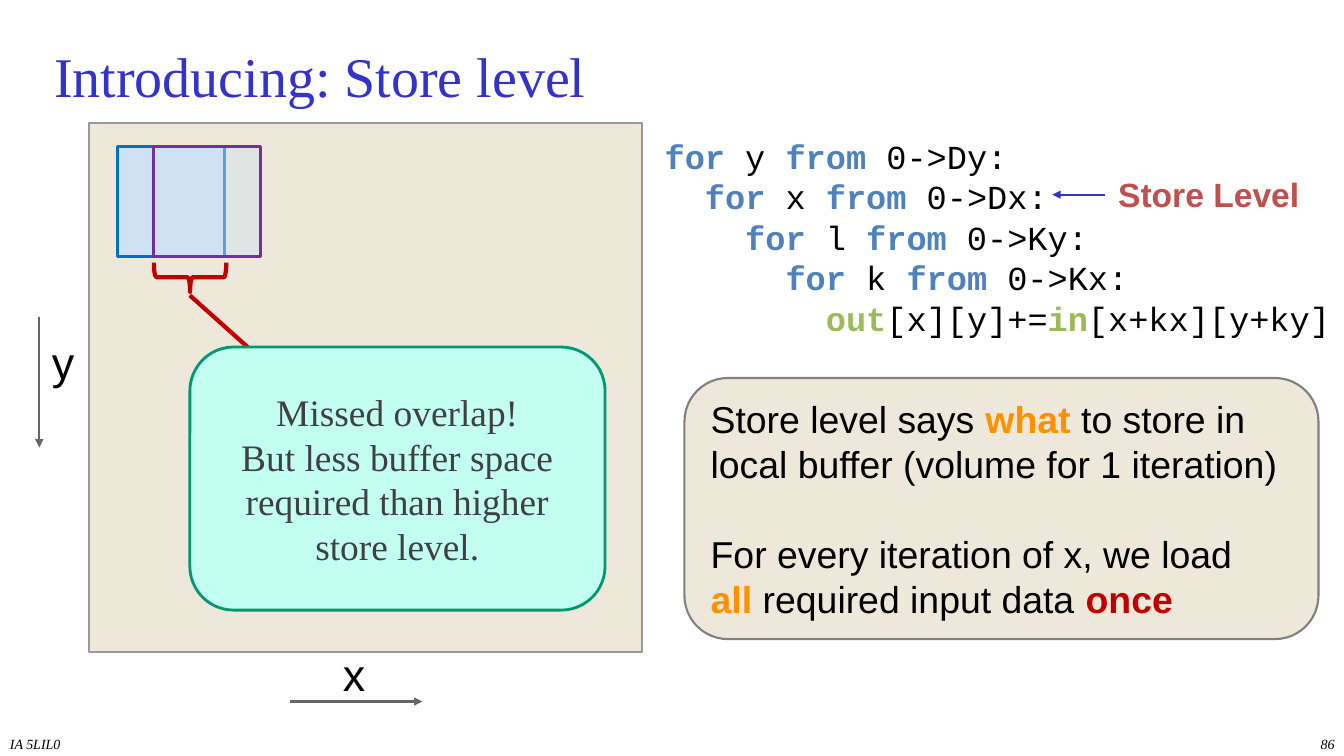
from lxml.etree import SubElement
from pptx import Presentation
from pptx.dml.color import RGBColor
from pptx.enum.shapes import MSO_CONNECTOR, MSO_SHAPE
from pptx.enum.text import MSO_ANCHOR, PP_ALIGN
from pptx.oxml.ns import qn
from pptx.util import Pt

SANS, SERIF, MONO = "Arial", "Times New Roman", "Courier New"
BLACK, BLUE, GREEN = "000000", "4F81BD", "9BBB59"
ORANGE, RED, GREY, SAND, SKY = "FF9100", "C00000", "666666", "EEE8DA", "CFE2F3"


def color(code):
    return RGBColor.from_string(code)


def write(shape, paras, size=24, font=SANS, tint=BLACK, bold=False,
          italic=False, align=PP_ALIGN.LEFT, anchor=MSO_ANCHOR.TOP,
          inset=(9.6, 9.6), lead=None, indent=0, gaps=None):
    """Each paragraph is a list of runs: plain text, or (text, colour) for bold."""
    frame = shape.text_frame
    frame.word_wrap = True
    frame.vertical_anchor = anchor
    frame.margin_left = frame.margin_right = Pt(inset[0])
    frame.margin_top = frame.margin_bottom = Pt(inset[1])
    for i, runs in enumerate(paras):
        para = frame.paragraphs[0] if i == 0 else frame.add_paragraph()
        para.alignment = align
        para.space_before = Pt((gaps or {}).get(i, 0))
        if lead:
            para.line_spacing = lead
        if indent:
            props = para._p.get_or_add_pPr()
            props.set("marL", str(Pt(indent * i)))
            props.set("indent", "0")
        for part in runs:
            strong = isinstance(part, tuple)
            run = para.add_run()
            run.text = part[0] if strong else part
            run.font.name, run.font.size = font, Pt(size)
            run.font.bold, run.font.italic = bold or strong, italic
            run.font.color.rgb = color(part[1] if strong else tint)


def label(slide, box, paras, **style):
    write(slide.shapes.add_textbox(*map(Pt, box)), paras, **style)


def panel(slide, kind, box, line, width, fill=None, alpha=None):
    shape = slide.shapes.add_shape(kind, *map(Pt, box))
    shape.shadow.inherit = False
    shape.line.color.rgb = color(line)
    shape.line.width = Pt(width)
    if fill:
        shape.fill.solid()
        shape.fill.fore_color.rgb = color(fill)
    else:
        shape.fill.background()
    if alpha:
        tone = shape.fill._xPr.find(qn("a:solidFill"))[0]
        SubElement(tone, qn("a:alpha")).set("val", str(alpha * 1000))
    return shape


def link(slide, ends, tint, width=1.5, arrow=True):
    line = slide.shapes.add_connector(MSO_CONNECTOR.STRAIGHT, *map(Pt, ends))
    line.line.color.rgb = color(tint)
    line.line.width = Pt(width)
    if arrow:
        tail = SubElement(line.line._get_or_add_ln(), qn("a:tailEnd"))
        tail.set("type", "triangle")
    SubElement(line._element.spPr, qn("a:effectLst"))


def loop(name, bound):
    return [("for", BLUE), f" {name} ", ("from ", BLUE), f"0->{bound}:"]


def main():
    deck = Presentation()
    deck.slide_width, deck.slide_height = Pt(960), Pt(540)
    slide = deck.slides.add_slide(deck.slide_layouts[6])

    # Image plane and title
    panel(slide, MSO_SHAPE.RECTANGLE, (63.4, 87.8, 395.3, 378), "999999", 1.5, SAND)
    label(slide, (30.2, 18, 897.8, 72), [["Introducing: Store level"]], size=40,
          font=SERIF, tint="3333CC", anchor=MSO_ANCHOR.MIDDLE, inset=(8.6, 8.6))

    # Loop nest, one indent step per level
    code = [loop("y", "Dy"), loop("x", "Dx"), loop("l", "Ky"), loop("k", "Kx"),
            [("out", GREEN), "[x][y]+=", ("in", GREEN), "[x+kx][y+ky]"]]
    label(slide, (465.1, 87.2, 500.4, 197.3), code, font=MONO,
          lead=Pt(28.9), indent=28.8)
    label(slide, (789.1, 114.5, 158.4, 53.3), [["Store Level"]],
          tint="C0504D", bold=True)
    link(slide, (789.1, 139, 751.7, 139), "3333CC")

    # Axes
    label(slide, (235.4, 452.2, 117.4, 43.2), [["x"]], size=32)
    link(slide, (207.4, 501.1, 301.7, 501.1), GREY)
    label(slide, (27.4, 229.7, 117.4, 43.2), [["y"]], size=32)
    link(slide, (28.1, 226.1, 28.1, 319.7), GREY)

    # Explanation
    note = panel(slide, MSO_SHAPE.ROUNDED_RECTANGLE, (488.9, 270, 452.9, 186.5),
                 "808080", 1.5, SAND)
    write(note, [["Store level says ", ("what", ORANGE),
                  " to store in local buffer (volume for 1 iteration)"],
                 ["For every iteration of x, we load"],
                 [("all ", ORANGE), "required input data ", ("once", RED)]],
          size=26.7, anchor=MSO_ANCHOR.MIDDLE, lead=Pt(32), gaps={1: 32})

    # Overlapping windows
    for left, line, alpha in ((84.2, "0070C0", None), (109.7, "7030A0", 44)):
        panel(slide, MSO_SHAPE.RECTANGLE, (left, 104.9, 76.3, 78.5),
              line, 2.25, SKY, alpha)

    # Brace and callout
    brace = panel(slide, MSO_SHAPE.RIGHT_BRACE, (125.3, 172.1, 20.9, 51.8), RED, 3)
    brace.rotation = 90
    link(slide, (135.6, 211, 180.7, 251.3), RED, width=3, arrow=False)
    call = panel(slide, MSO_SHAPE.ROUNDED_RECTANGLE, (135.6, 247.9, 296.6, 187.9),
                 "009771", 2, "C2FFF0")
    write(call, [["Missed overlap!"],
                 ["But less buffer space required than higher store level."]],
          size=26.7, font=SERIF, tint="404040", align=PP_ALIGN.CENTER,
          anchor=MSO_ANCHOR.MIDDLE, inset=(7.2, 3.6), lead=Pt(32))

    # Footer
    for left, text, align in ((760.3, "86", PP_ALIGN.RIGHT),
                              (0, "IA 5LIL0", PP_ALIGN.LEFT)):
        label(slide, (left, 522, 200, 18), [[text]], size=10, font=SERIF,
              italic=True, align=align, inset=(7.2, 3.6))

    deck.save("out.pptx")


if __name__ == "__main__":
    main()
